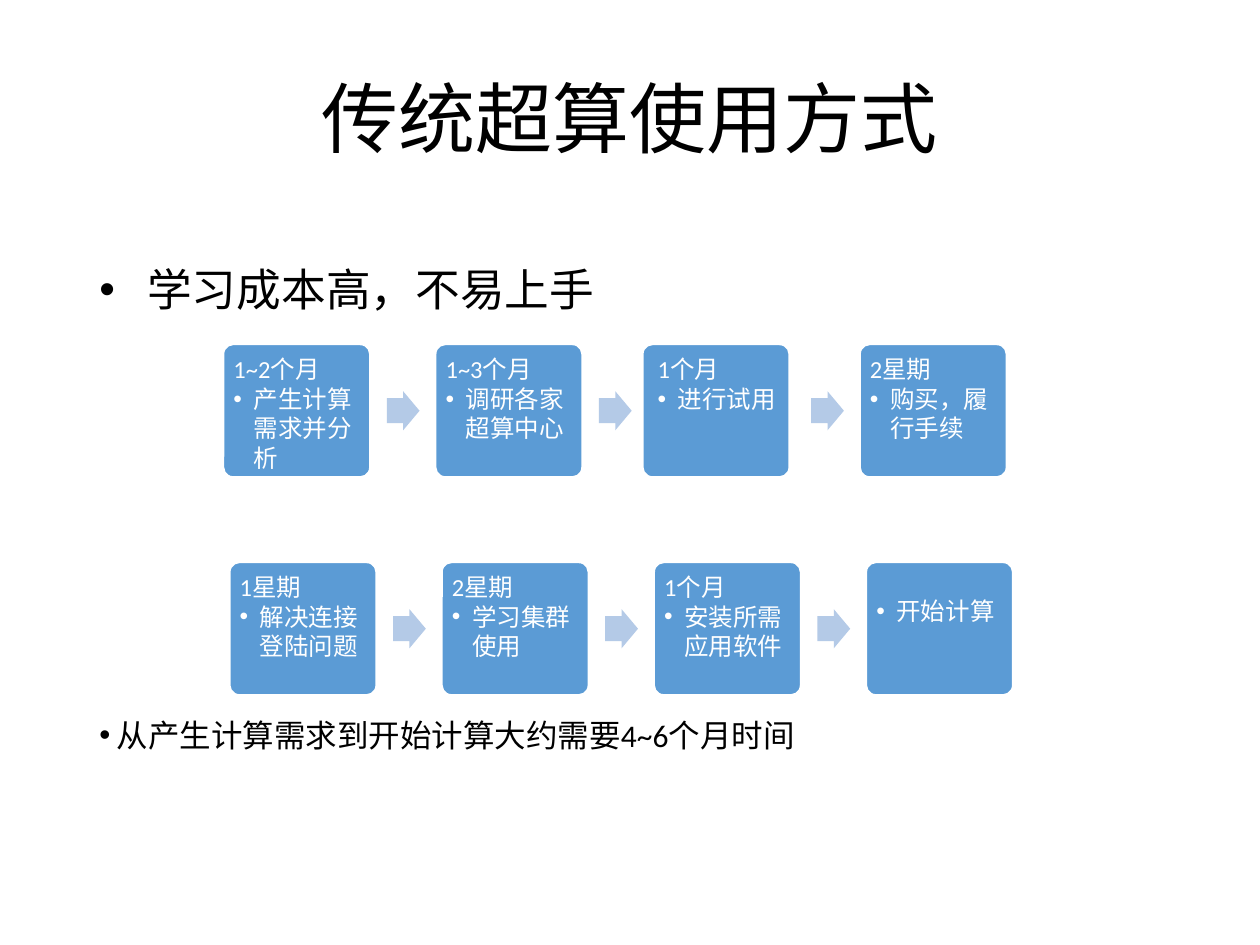
from lxml import etree
from pptx import Presentation
from pptx.dml.color import RGBColor
from pptx.enum.shapes import MSO_SHAPE
from pptx.enum.text import MSO_ANCHOR, PP_ALIGN
from pptx.oxml.ns import qn
from pptx.util import Inches, Pt

ROUNDED, ARROW = MSO_SHAPE.ROUNDED_RECTANGLE, MSO_SHAPE.RIGHT_ARROW
TOP, MIDDLE = MSO_ANCHOR.TOP, MSO_ANCHOR.MIDDLE
LEFT, CENTER = PP_ALIGN.LEFT, PP_ALIGN.CENTER
BLACK = RGBColor(0x00, 0x00, 0x00)
WHITE = RGBColor(0xFF, 0xFF, 0xFF)
STEP_BLUE = RGBColor(0x5B, 0x9B, 0xD5)
ARROW_BLUE = RGBColor(0xB4, 0xCA, 0xE7)

# Content
TITLE = "传统超算使用方式"
# text, top, height, size, indent
POINTS = [
    ("学习成本高，不易上手", 2.11, 0.55, 25.5, 0.38),
    ("从产生计算需求到开始计算大约需要4~6个月时间", 5.69, 0.45, 18, 0.14),
]
# Each row: left, top, steps as (duration, task, shift of box, left inset)
ROWS = [
    (1.77, 2.73, [
        ("1~2个月", "产生计算需求并分析", 0, 0.06),
        ("1~3个月", "调研各家超算中心", 0, 0.06),
        ("1个月", "进行试用", -0.04, 0.1),
        ("2星期", "购买，履行手续", 0, 0.06),
    ]),
    (1.82, 4.46, [
        ("1星期", "解决连接登陆问题", 0, 0.06),
        ("2星期", "学习集群使用", 0, 0.06),
        ("1个月", "安装所需应用软件", 0, 0.06),
        (None, "开始计算", 0, 0.06),
    ]),
]

# Layout
STEP_W, STEP_H, PITCH = 1.17, 1.06, 1.684
ARROW_W, ARROW_H, ARROW_DX = 0.26, 0.31, 1.3
INSET, UNTIMED_INSET = 0.06, 0.25


def set_format(target, **values):
    for key, value in values.items():
        setattr(target, key, value)


def write_line(paragraph, text, size, color, indent=0, align=LEFT, spacing=None):
    if indent:
        props = paragraph._p.get_or_add_pPr()
        props.set("marL", str(Inches(indent)))
        props.set("indent", str(-Inches(indent)))
        etree.SubElement(props, qn("a:buFont")).set("typeface", "Arial")
        etree.SubElement(props, qn("a:buChar")).set("char", "•")
    set_format(paragraph, alignment=align, line_spacing=spacing)
    run = paragraph.add_run()
    run.text = text
    set_format(run.font, name="Calibri", size=Pt(size))
    run.font.color.rgb = color


def add_block(slide, left, top, width, height, anchor=TOP):
    block = slide.shapes.add_textbox(*map(Inches, (left, top, width, height)))
    set_format(block.text_frame, word_wrap=True, vertical_anchor=anchor)
    return block.text_frame.paragraphs[0]


def add_filled(slide, kind, left, top, width, height, fill, adjustments):
    shape = slide.shapes.add_shape(kind, *map(Inches, (left, top, width, height)))
    shape.shadow.inherit = False
    shape.fill.solid()
    shape.fill.fore_color.rgb = fill
    for i, value in enumerate(adjustments):
        shape.adjustments[i] = value
    return shape


def add_step(slide, left, top, duration, task, text_inset):
    step = add_filled(slide, ROUNDED, left, top, STEP_W, STEP_H, STEP_BLUE, [0.075])
    step.line.color.rgb = WHITE
    step.line.width = Pt(1.5)
    frame = step.text_frame
    set_format(frame, word_wrap=True, vertical_anchor=TOP,
               margin_left=Inches(text_inset), margin_right=Inches(INSET),
               margin_top=Inches(INSET if duration else UNTIMED_INSET),
               margin_bottom=0)
    paragraph = frame.paragraphs[0]
    if duration:
        write_line(paragraph, duration, 14, WHITE)
        paragraph = frame.add_paragraph()
    write_line(paragraph, task, 14, WHITE, indent=0.16)


def add_row(slide, left, top, steps):
    for i, (duration, task, shift, text_inset) in enumerate(steps):
        x = left + i * PITCH
        add_step(slide, x + shift, top, duration, task, text_inset)
        if i < len(steps) - 1:
            arrow = add_filled(slide, ARROW, x + ARROW_DX, top + (STEP_H - ARROW_H) / 2,
                               ARROW_W, ARROW_H, ARROW_BLUE, [0.64, 0.5])
            arrow.line.fill.background()


def main():
    prs = Presentation()
    set_format(prs, slide_width=Inches(10), slide_height=Inches(7.5))
    slide = prs.slides.add_slide(prs.slide_layouts[6])

    # Title
    write_line(add_block(slide, 0.5, 0.3, 9, 1.25, MIDDLE), TITLE, 44, BLACK, align=CENTER)

    # Bullet points above and below the process
    for text, top, height, size, indent in POINTS:
        write_line(add_block(slide, 0.69, top, 8.63, height), text, size, BLACK,
                   indent=indent, spacing=0.81)

    # Process rows
    for row in ROWS:
        add_row(slide, *row)

    prs.save("out.pptx")


if __name__ == "__main__":
    main()
